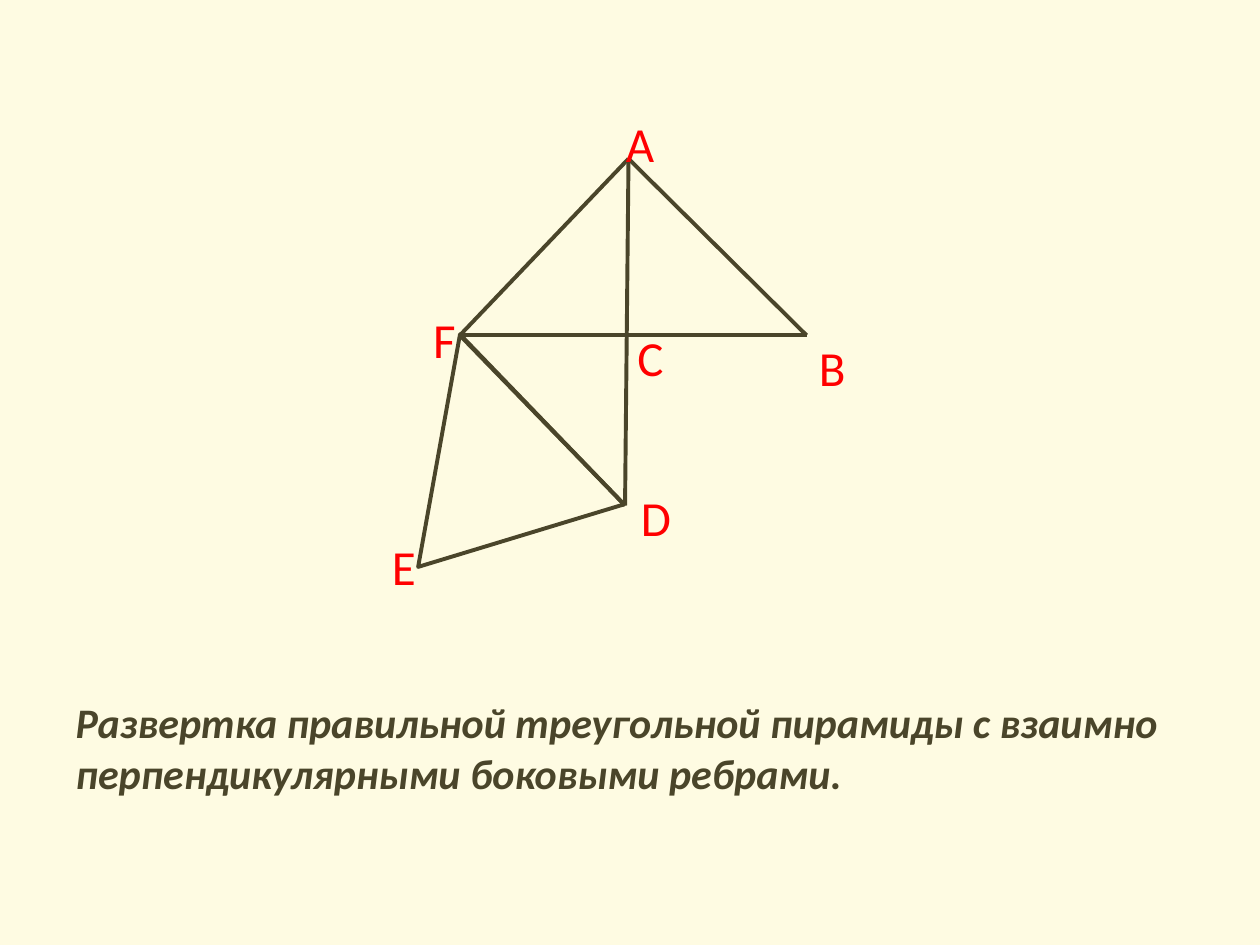
from lxml import etree
from pptx import Presentation
from pptx import util as u
from pptx.dml.color import RGBColor
from pptx.enum import shapes, text
from pptx.oxml import ns


def color(hex_value):
    return RGBColor.from_string(hex_value)


class NetSlide:
    """Style of the pyramid net and the slide it is drawn on."""

    INK, PAPER, ACCENT = "4A452A", "FEFBE2", "FF0000"
    STROKE = u.Pt(2.25)
    CAPTION = {"name": "Calibri", "size": u.Pt(24), "bold": True, "italic": True}
    LABEL = {"name": "Calibri", "size": u.Pt(28)}
    LABEL_HEIGHT = 1.45

    def __init__(self, prs):
        self.slide = prs.slides.add_slide(prs.slide_layouts[1])
        fill = self.slide.background.fill
        fill.solid()
        fill.fore_color.rgb = color(self.PAPER)
        title = self.slide.shapes.title.element
        title.getparent().remove(title)

    def style_font(self, font, values, hex_value):
        for name, value in values.items():
            setattr(font, name, value)
        font.color.rgb = color(hex_value)

    def style_line(self, line):
        line.width = self.STROKE
        line.color.rgb = color(self.INK)

    def caption(self, words, left, top, width, height):
        body = self.slide.placeholders[1]
        box = {"left": left, "top": top, "width": width, "height": height}
        for name, value in box.items():
            setattr(body, name, u.Cm(value))
        body.text_frame.text = words
        paragraph = body.text_frame.paragraphs[0]
        paragraph.space_before = u.Pt(0)
        properties = paragraph._p.get_or_add_pPr()
        properties.set("marL", "0")
        properties.set("indent", "0")
        etree.SubElement(properties, ns.qn("a:buNone"))
        self.style_font(paragraph.runs[0].font, self.CAPTION, self.INK)

    def edge(self, start, end):
        ends = [u.Cm(value) for value in (*start, *end)]
        edge = self.slide.shapes.add_connector(shapes.MSO_CONNECTOR.STRAIGHT, *ends)
        self.style_line(edge.line)
        etree.SubElement(edge.element.spPr, ns.qn("a:effectLst"))

    def face(self, left, top, width, height, rotation):
        face = self.slide.shapes.add_shape(
            shapes.MSO_SHAPE.ISOSCELES_TRIANGLE,
            *map(u.Cm, (left, top, width, height)))
        face.rotation = rotation
        face.shadow.inherit = False
        face.fill.background()
        self.style_line(face.line)

    def label(self, letter, left, top, width):
        box = self.slide.shapes.add_textbox(
            *map(u.Cm, (left, top, width, self.LABEL_HEIGHT)))
        frame = box.text_frame
        frame.word_wrap = False
        frame.auto_size = text.MSO_AUTO_SIZE.SHAPE_TO_FIT_TEXT
        frame.text = letter
        self.style_font(frame.paragraphs[0].runs[0].font, self.LABEL, self.ACCENT)


def main():
    prs = Presentation()
    prs.slide_width, prs.slide_height = u.Cm(25.4), u.Cm(19.05)
    net = NetSlide(prs)

    # Caption under the net
    net.caption("Развертка правильной треугольной пирамиды с взаимно "
                "перпендикулярными боковыми ребрами.", 1.27, 13.92, 22.86, 3.1)

    # Edges between the vertices of the net
    vertices = {"A": (12.67, 3.2), "B": (16.26, 6.76),
                "D": (12.6, 10.19), "F": (9.27, 6.76)}
    for start, end in ("AD", "FB", "AB", "AF", "FD"):
        net.edge(vertices[start], vertices[end])

    # Base of the pyramid, DEF
    net.face(7.72, 6.65, 4.34, 4.24, 343.1)

    # Vertex letters
    labels = {"A": (12.37, 2.16, 1.09), "B": (16.26, 6.68, 1.07),
              "C": (12.6, 6.48, 1.04), "D": (12.67, 9.7, 1.12),
              "F": (8.48, 6.12, 0.97), "E": (7.65, 10.69, 0.91)}
    for letter, place in labels.items():
        net.label(letter, *place)

    prs.save("out.pptx")


if __name__ == "__main__":
    main()
